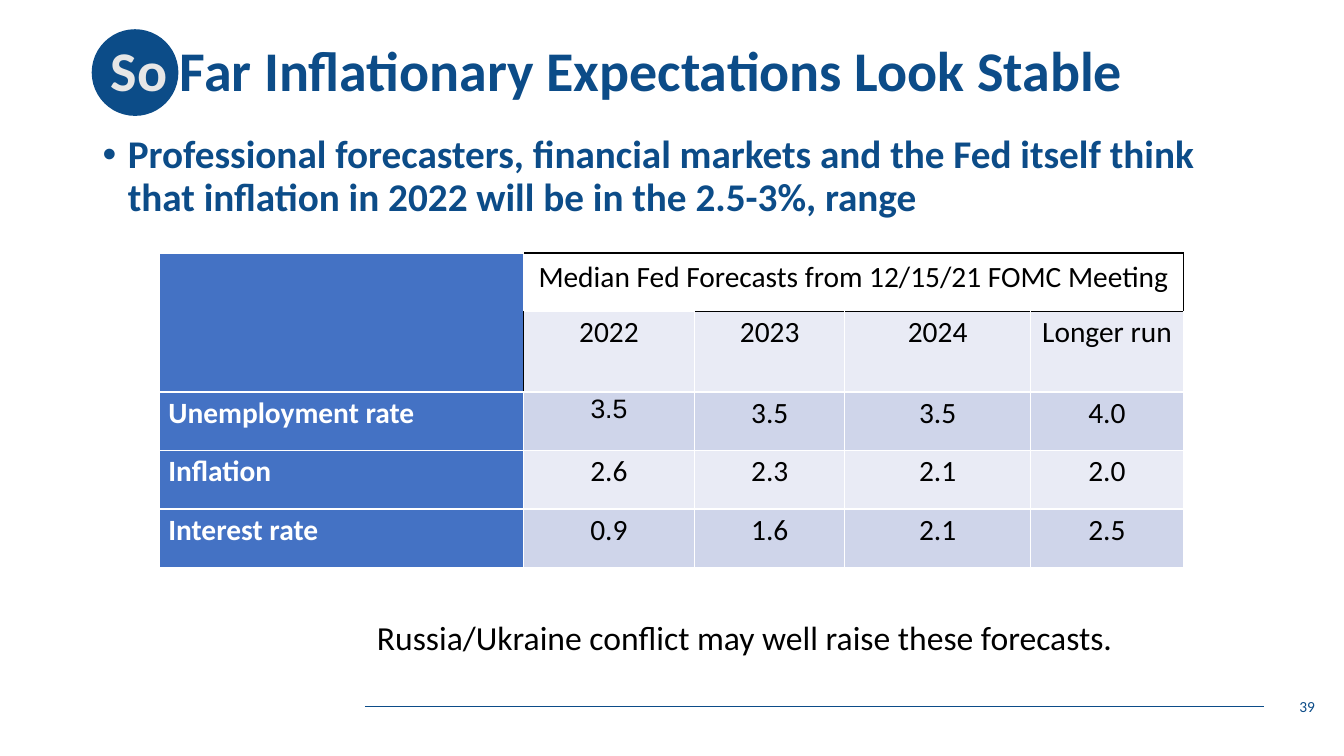
"""Build the slide on inflation forecasts."""
import lxml.etree
import pptx
import pptx.dml.color
import pptx.enum.shapes
import pptx.enum.text
import pptx.oxml.ns
import pptx.util

RGB = pptx.dml.color.RGBColor
ALIGN = pptx.enum.text.PP_ALIGN
ANCHOR = pptx.enum.text.MSO_ANCHOR
SHAPE = pptx.enum.shapes.MSO_SHAPE
LINE = pptx.enum.shapes.MSO_CONNECTOR
qn = pptx.oxml.ns.qn

NAVY = RGB(0x0C, 0x4C, 0x88)
GREY = RGB(0xE7, 0xE6, 0xE6)
BLUE = RGB(0x44, 0x72, 0xC4)
PALE = RGB(0xE9, 0xEB, 0xF5)
MID = RGB(0xCF, 0xD5, 0xEA)
WHITE = RGB(0xFF, 0xFF, 0xFF)
BLACK = RGB(0, 0, 0)

SCALE = 9144
COLS = [361, 170, 149, 184, 152]
ROWS = [58, 80, 58, 58, 58]
HEAD = "Median Fed Forecasts from 12/15/21 FOMC Meeting"
YEARS = ["2022", "2023", "2024", "Longer run"]
RATES = [
    ["Unemployment rate", "3.5", "3.5", "3.5", "4.0"],
    ["Inflation", "2.6", "2.3", "2.1", "2.0"],
    ["Interest rate", "0.9", "1.6", "2.1", "2.5"],
]


def px(*sizes):
    """Turn px lengths into EMU."""
    return [pptx.util.Emu(size * SCALE) for size in sizes]


def text(para, words, size=21, color=BLACK, bold=False, font="Calibri",
         align=ALIGN.LEFT, space=1.0, after=0):
    """Add a run of words to a paragraph and format both."""
    para.alignment = align
    para.line_spacing = space
    para.space_after = pptx.util.Pt(after)
    run = para.add_run()
    run.text = words
    run.font.name = font
    run.font.size = pptx.util.Pt(size)
    run.font.bold = bold
    run.font.color.rgb = color


def box(slide, area, anchor=ANCHOR.MIDDLE, wrap=True, top=5):
    """Add a text box and return its first paragraph."""
    frame = slide.shapes.add_textbox(*px(*area)).text_frame
    frame.word_wrap = wrap
    frame.vertical_anchor = anchor
    frame.margin_top = px(top)[0]
    return frame.paragraphs[0]


def bullet(para, indent):
    """Give a paragraph a round bullet with a hanging indent."""
    props = para._p.get_or_add_pPr()
    step = px(indent)[0]
    props.set("marL", str(step))
    props.set("indent", str(-step))
    lxml.etree.SubElement(props, qn("a:buFont")).set("typeface", "Arial")
    lxml.etree.SubElement(props, qn("a:buChar")).set("char", "•")


def rule(slide, ends):
    """Add the thin footer line."""
    line = slide.shapes.add_connector(LINE.STRAIGHT, *px(*ends))
    line.line.color.rgb = NAVY
    line.line.width = pptx.util.Pt(0.5)
    lxml.etree.SubElement(line._element.spPr, qn("a:effectLst"))


def disc(slide, area):
    """Add the round backing of the title's first word."""
    shape = slide.shapes.add_shape(SHAPE.OVAL, *px(*area))
    shape.shadow.inherit = False
    shape.fill.solid()
    shape.fill.fore_color.rgb = NAVY
    shape.line.fill.background()


def edge(cell, colors):
    """Draw the four borders of a cell, given as side and colour."""
    props = cell._tc.get_or_add_tcPr()
    sides = [side for side in "LRTB" if side in colors]
    for spot, side in enumerate(sides):
        line = lxml.etree.Element(qn("a:ln" + side), w="12700")
        fill = lxml.etree.SubElement(line, qn("a:solidFill"))
        tint = lxml.etree.SubElement(fill, qn("a:srgbClr"))
        tint.set("val", str(colors[side]))
        props.insert(spot, line)


def sides(row, col):
    """Pick the border colours of the cell at a row and column."""
    colors = dict.fromkeys("LRTB", WHITE)
    if row == 0 and col > 0:
        colors["T"] = colors["R"] = BLACK
        colors["B"] = WHITE if col == 1 else BLACK
    if row == 1:
        colors["T"] = BLACK if col > 1 else WHITE
        colors["L"] = BLACK if col == 1 else WHITE
        colors["R"] = BLACK if col == 0 else WHITE
    return colors


def tint(cell, row, col):
    """Fill a cell by its row and column."""
    if row == 0 and col > 0:
        cell.fill.background()
        return
    cell.fill.solid()
    cell.fill.fore_color.rgb = BLUE if col == 0 else (MID, PALE)[row % 2]


def pad(cell, *sizes):
    """Set the left, top, right and bottom margins of a cell."""
    (cell.margin_left, cell.margin_top,
     cell.margin_right, cell.margin_bottom) = px(*sizes)


def grid(slide, left, top):
    """Add the table of forecasts."""
    area = px(left, top, sum(COLS), sum(ROWS))
    table = slide.shapes.add_table(len(ROWS), len(COLS), *area).table
    table.first_row = table.horz_banding = False
    for col, width in zip(table.columns, px(*COLS)):
        col.width = width
    for row, height in zip(table.rows, px(*ROWS)):
        row.height = height
    words = [["", HEAD, "", "", ""], [""] + YEARS] + RATES
    for row, line in enumerate(words):
        for col, word in enumerate(line):
            cell = table.cell(row, col)
            tint(cell, row, col)
            edge(cell, sides(row, col))
            pad(cell, *((7, 4, 7, 4) if row == 0 else (9, 1, 9, 0)))
            if not word:
                continue
            look = {"align": ALIGN.CENTER, "space": 1.06}
            if row == 0:
                look.update(space=1.07, after=8)
            if col == 0:
                look.update(align=ALIGN.LEFT, color=WHITE, bold=True)
            if (row, col) == (2, 1):
                look.update(font="Arial", size=19)
            text(cell.text_frame.paragraphs[0], word, **look)
    table.cell(0, 0).merge(table.cell(1, 0))
    table.cell(0, 1).merge(table.cell(0, 4))


def main():
    """Build and save the slide."""
    deck = pptx.Presentation()
    deck.slide_width, deck.slide_height = px(1333, 750)
    slide = deck.slides.add_slide(deck.slide_layouts[6])
    rule(slide, (362, 701, 1254, 701))
    disc(slide, (91, 29, 86, 86))
    title = box(slide, (100, 0, 1150, 145))
    bold = {"bold": True, "space": 0.9}
    text(title, "So", size=40, color=GREY, **bold)
    text(title, " Far Inflationary Expectations Look Stable",
         size=40, color=NAVY, **bold)
    point = box(slide, (92, 107, 1150, 476), anchor=ANCHOR.TOP, top=27)
    bullet(point, 25)
    text(point, "Professional forecasters, financial markets and the Fed "
         "itself think that inflation in 2022 will be in the 2.5-3%, range",
         size=28, color=NAVY, **bold)
    text(box(slide, (1014, 681, 300, 40)), "39", size=11, color=NAVY,
         align=ALIGN.RIGHT)
    grid(slide, 158, 251)
    note = box(slide, (364, 607, 756, 50), anchor=ANCHOR.TOP, wrap=False)
    text(note, "Russia/Ukraine conflict may well raise these forecasts.",
         size=24)
    deck.save("out.pptx")


if __name__ == "__main__":
    main()
